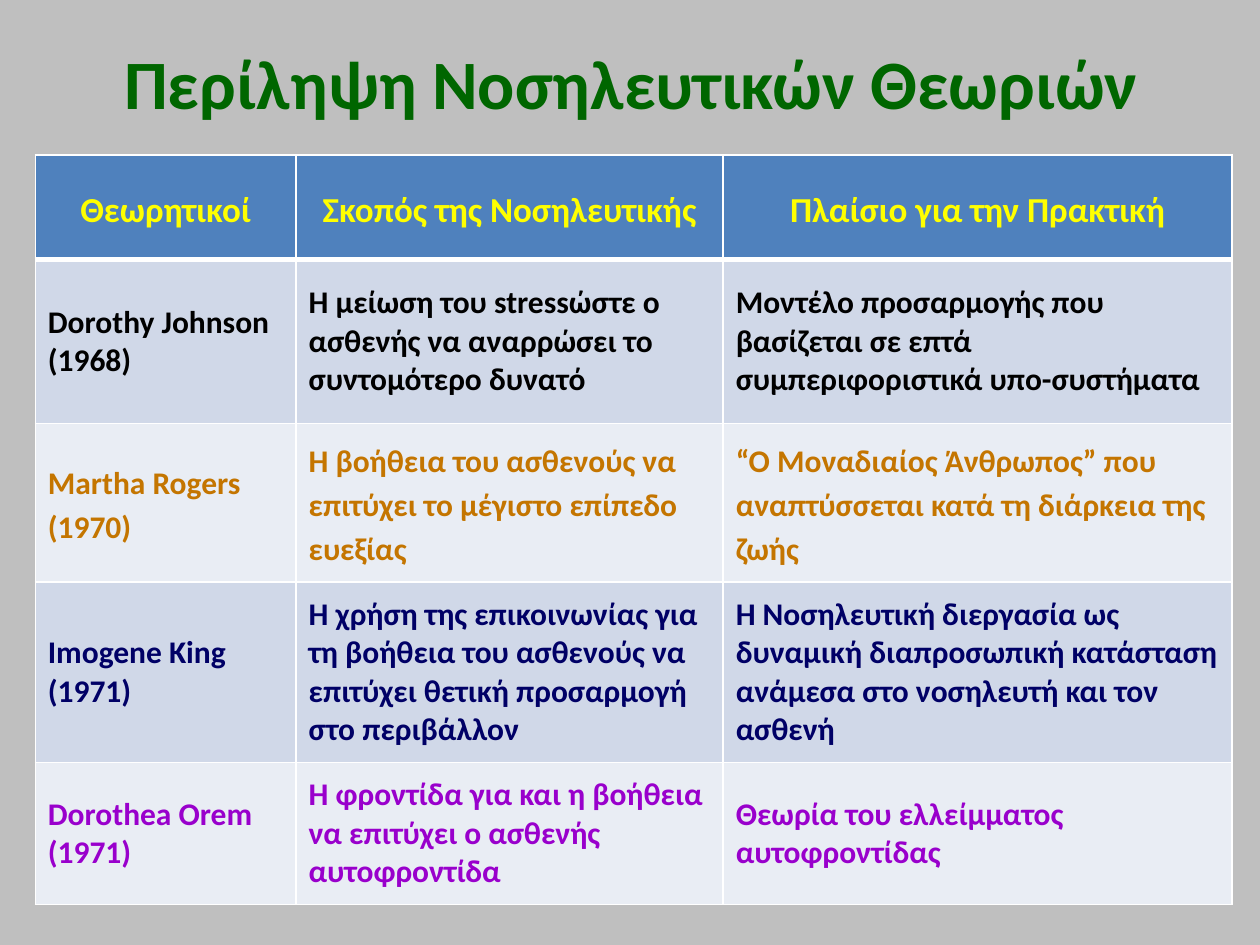
from pptx import Presentation
from pptx import util as u
from pptx.dml import color
from pptx.enum import text
from pptx.oxml import parse_xml
from pptx.oxml.ns import nsdecls

FONT = "Calibri"
COLUMN_WIDTHS = [2.07, 3.39, 4.04]
ROW_HEIGHTS = [0.83, 1.3, 1.26, 1.43, 1.13]
HEADER = ["Θεωρητικοί", "Σκοπός της Νοσηλευτικής", "Πλαίσιο για την Πρακτική"]
THEORISTS = [
    ("000000", 1.0, [
        "Dorothy Johnson (1968)",
        "Η μείωση του stressώστε ο ασθενής να αναρρώσει το συντομότερο δυνατό",
        "Μοντέλο προσαρμογής που βασίζεται σε επτά συμπεριφοριστικά υπο-συστήματα"]),
    ("C47500", 1.15, [
        "Martha Rogers (1970)",
        "Η βοήθεια του ασθενούς να επιτύχει το μέγιστο επίπεδο ευεξίας",
        "“Ο Μοναδιαίος Άνθρωπος” που αναπτύσσεται κατά τη διάρκεια της ζωής"]),
    ("000066", 1.0, [
        "Imogene King (1971)",
        "Η χρήση της επικοινωνίας για τη βοήθεια του ασθενούς να επιτύχει "
        "θετική προσαρμογή στο περιβάλλον",
        "Η Νοσηλευτική διεργασία ως δυναμική διαπροσωπική κατάσταση "
        "ανάμεσα στο νοσηλευτή και τον ασθενή"]),
    ("9900CC", 1.0, [
        "Dorothea Orem (1971)",
        "Η φροντίδα για και η βοήθεια να επιτύχει ο ασθενής αυτοφροντίδα",
        "Θεωρία του ελλείμματος αυτοφροντίδας"]),
]


def rgb(value):
    """Turn a hex string into a colour."""
    return color.RGBColor.from_string(value)


def fill_solid(target, value):
    """Give the target's fill one solid colour."""
    target.fill.solid()
    target.fill.fore_color.rgb = rgb(value)


def write(frame, wording, size, hue, align, spacing=1.0):
    """Write one bold paragraph into a text frame."""
    frame.word_wrap = True
    frame.text = wording
    paragraph = frame.paragraphs[0]
    paragraph.alignment = align
    paragraph.line_spacing = spacing
    font = paragraph.runs[0].font
    font.name, font.size, font.bold = FONT, u.Pt(size), True
    font.color.rgb = rgb(hue)


def add_title(slide, wording):
    """Add the slide's heading."""
    box = slide.shapes.add_textbox(u.Inches(0.51), u.Inches(0.29), u.Inches(9), u.Inches(0.71))
    box.text_frame.vertical_anchor = text.MSO_ANCHOR.MIDDLE
    write(box.text_frame, wording, 39.6, "006600", text.PP_ALIGN.CENTER)


def set_borders(cell, top, bottom):
    """Draw white cell borders with the given top and bottom widths in points."""
    properties = cell._tc.get_or_add_tcPr()
    widths = {"lnL": 1, "lnR": 1, "lnT": top, "lnB": bottom}
    for position, (tag, width) in enumerate(widths.items()):
        line = parse_xml(
            f'<a:{tag} {nsdecls("a")} w="{u.Pt(width)}"><a:solidFill>'
            f'<a:srgbClr val="FFFFFF"/></a:solidFill></a:{tag}>')
        properties.insert(position, line)


def fill_row(table, index, wordings, fill, size, hue, align, spacing):
    """Write and format one row of the table."""
    for cell, wording in zip(table.rows[index].cells, wordings):
        cell.margin_left = cell.margin_right = u.Inches(0.1)
        cell.margin_top = cell.margin_bottom = u.Inches(0.1)
        cell.vertical_anchor = text.MSO_ANCHOR.MIDDLE
        fill_solid(cell, fill)
        set_borders(cell, 3 if index == 1 else 1, 3 if index == 0 else 1)
        write(cell.text_frame, wording, size, hue, align, spacing)


def add_theory_table(slide):
    """Add the table of theorists under its header row."""
    frame = slide.shapes.add_table(
        len(ROW_HEIGHTS), len(COLUMN_WIDTHS), u.Inches(0.28), u.Inches(1.23),
        u.Inches(sum(COLUMN_WIDTHS)), u.Inches(sum(ROW_HEIGHTS)))
    table = frame.table
    for column, width in zip(table.columns, COLUMN_WIDTHS):
        column.width = u.Inches(width)
    for row, height in zip(table.rows, ROW_HEIGHTS):
        row.height = u.Inches(height)
    fill_row(table, 0, HEADER, "4F81BD", 20, "FFFF00", text.PP_ALIGN.CENTER, 1.15)
    for index, (hue, spacing, wordings) in enumerate(THEORISTS, start=1):
        fill = "D0D8E8" if index % 2 else "E9EDF4"
        fill_row(table, index, wordings, fill, 18, hue, text.PP_ALIGN.LEFT, spacing)


def main():
    """Build and save the slide."""
    presentation = Presentation()
    presentation.slide_width, presentation.slide_height = u.Inches(10), u.Inches(7.5)
    slide = presentation.slides.add_slide(presentation.slide_layouts[6])
    fill_solid(slide.background, "BFBFBF")
    add_title(slide, "Περίληψη Νοσηλευτικών Θεωριών")
    add_theory_table(slide)
    presentation.save("out.pptx")


if __name__ == "__main__":
    main()
